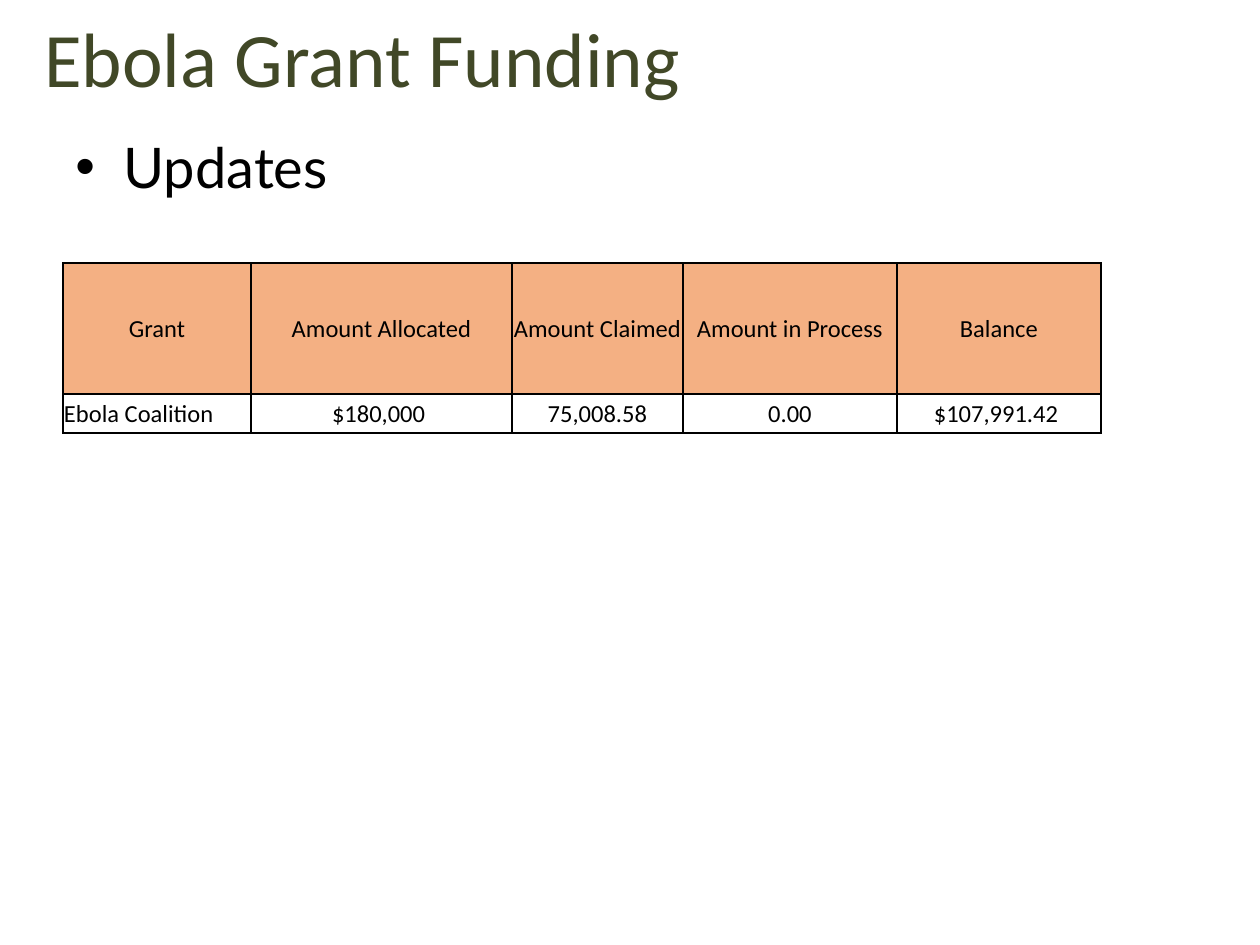
from lxml import etree
from pptx import Presentation
from pptx.dml.color import RGBColor
from pptx.enum.text import MSO_ANCHOR, PP_ALIGN
from pptx.oxml.ns import qn
from pptx.util import Emu, Pt

PX = 914400 // 126
OLIVE = RGBColor(0x41, 0x48, 0x27)
BLACK = RGBColor(0, 0, 0)
ORANGE = RGBColor(0xF4, 0xB0, 0x83)

COLUMN_WIDTHS = [188, 261, 171, 214, 204]
ROW_HEIGHTS = [131, 39]
GRANT_ROWS = [
    ["Grant", "Amount Allocated", "Amount Claimed", "Amount in Process", "Balance"],
    ["Ebola Coalition", "$180,000 ", "75,008.58", "0.00", "$107,991.42 "],
]


def px(length):
    return Emu(length * PX)


def style_font(paragraph, **values):
    color = values.pop("color")
    for name, value in values.items():
        setattr(paragraph.font, name, value)
    paragraph.font.color.rgb = color


def add_text(slide, text, box, **font):
    frame = slide.shapes.add_textbox(*map(px, box)).text_frame
    frame.word_wrap = True
    paragraph = frame.paragraphs[0]
    paragraph.text = text
    style_font(paragraph, **font)
    return paragraph


def add_bullet(paragraph, indent):
    properties = paragraph._p.get_or_add_pPr()
    properties.set("marL", str(px(indent)))
    properties.set("indent", str(-px(indent)))
    bullet_font = etree.Element(qn("a:buFont"), typeface="Arial")
    bullet = etree.Element(qn("a:buChar"), char="•")
    properties.insert(0, bullet_font)
    properties.insert(1, bullet)


def add_borders(cell):
    """Draw a thin black line on all four sides, ahead of the cell's fill."""
    properties = cell._tc.get_or_add_tcPr()
    for position, side in enumerate(("lnL", "lnR", "lnT", "lnB")):
        line = etree.Element(qn(f"a:{side}"), w=str(Pt(1)))
        fill = etree.SubElement(line, qn("a:solidFill"))
        etree.SubElement(fill, qn("a:srgbClr"), val=str(BLACK))
        properties.insert(position, line)


def fill_cell(cell, text, is_header, is_label):
    cell.text = text
    margins = {"margin_left": 1, "margin_right": 1, "margin_top": 1, "margin_bottom": 0}
    for name, value in margins.items():
        setattr(cell, name, px(value))
    cell.vertical_anchor = MSO_ANCHOR.MIDDLE
    if is_header:
        cell.fill.solid()
        cell.fill.fore_color.rgb = ORANGE
    else:
        cell.fill.background()
    add_borders(cell)
    paragraph = cell.text_frame.paragraphs[0]
    paragraph.alignment = PP_ALIGN.LEFT if is_label else PP_ALIGN.CENTER
    style_font(paragraph, name="Calibri", size=Pt(14), color=BLACK)


def add_grant_table(slide, left, top):
    size = sum(COLUMN_WIDTHS), sum(ROW_HEIGHTS)
    table = slide.shapes.add_table(
        len(ROW_HEIGHTS), len(COLUMN_WIDTHS), *map(px, (left, top, *size))
    ).table
    table.first_row = table.horz_banding = False
    for column, width in zip(table.columns, COLUMN_WIDTHS):
        column.width = px(width)
    for r, (height, texts) in enumerate(zip(ROW_HEIGHTS, GRANT_ROWS)):
        table.rows[r].height = px(height)
        for c, text in enumerate(texts):
            fill_cell(table.cell(r, c), text, r == 0, r > 0 and c == 0)


def main():
    deck = Presentation()
    deck.slide_width, deck.slide_height = px(1260), px(945)
    slide = deck.slides.add_slide(deck.slide_layouts[6])
    add_text(slide, "Ebola Grant Funding", (32, 4, 1218, 136),
             name="Calibri", size=Pt(44), color=OLIVE)
    updates = add_text(slide, "Updates", (63, 126, 1134, 624),
                       name="Lato", size=Pt(32), color=BLACK)
    add_bullet(updates, 48)
    add_grant_table(slide, 63, 263)
    deck.save("out.pptx")


if __name__ == "__main__":
    main()
